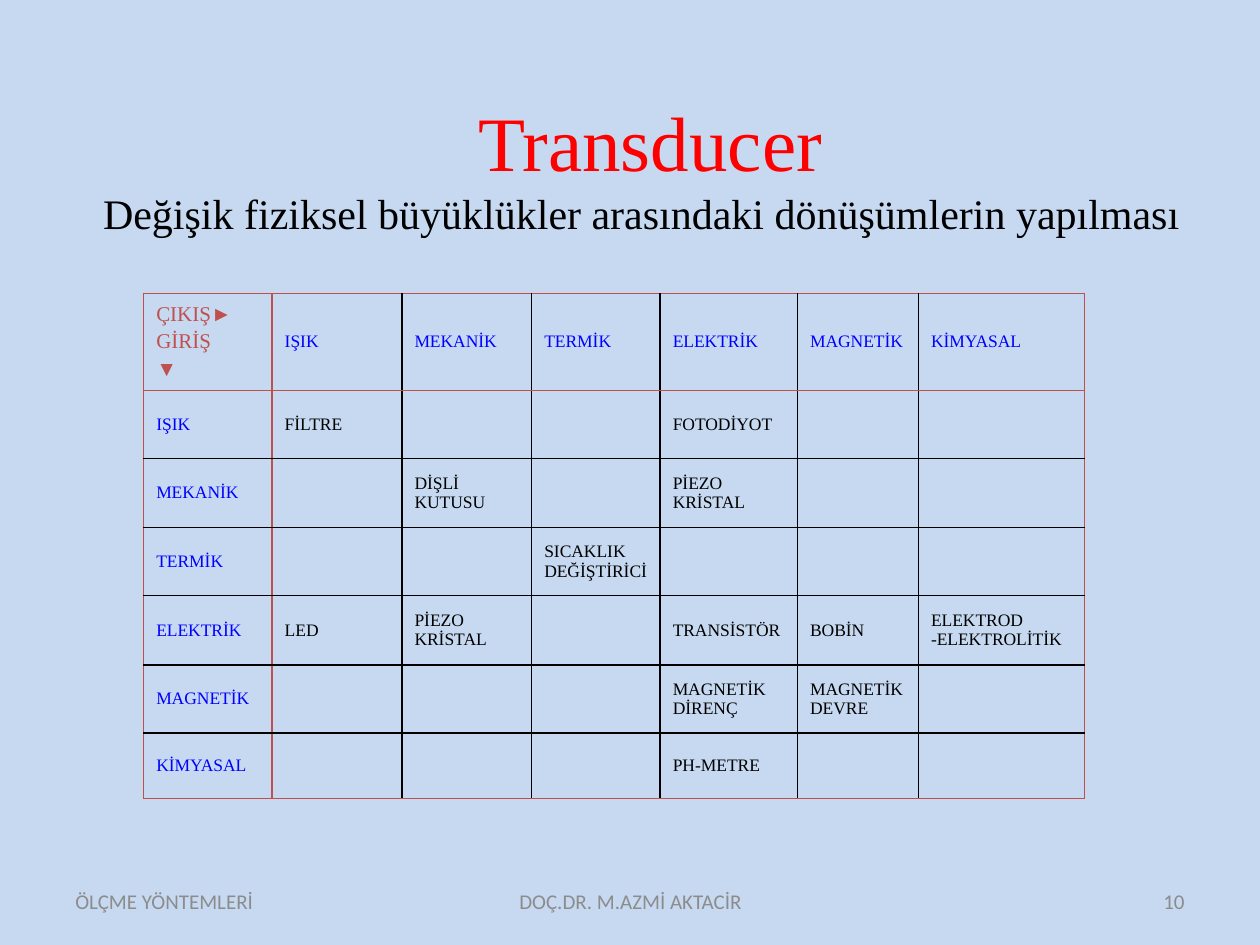
from lxml.etree import SubElement
from pptx import Presentation
from pptx.dml.color import RGBColor
from pptx.enum.text import MSO_ANCHOR, PP_ALIGN
from pptx.oxml.ns import qn
from pptx.util import Inches, Pt

SKY = RGBColor(0xC6, 0xD9, 0xF1)
RED = RGBColor(0xFF, 0x00, 0x00)
BRICK = RGBColor(0xC0, 0x50, 0x4D)
BLUE = RGBColor(0x00, 0x00, 0xFF)
BLACK = RGBColor(0x00, 0x00, 0x00)
GREY = RGBColor(0x8C, 0x8C, 0x8C)
SERIF, SANS = "Times New Roman", "Calibri"


def style(span, size, color, name=SERIF):
    span.font.size = Pt(size)
    span.font.name = name
    span.font.color.rgb = color


def add_border(cell, side, color):
    line = SubElement(cell._tc.get_or_add_tcPr(), qn("a:ln" + side), w=str(Pt(1)))
    fill = SubElement(line, qn("a:solidFill"))
    SubElement(fill, qn("a:srgbClr"), val=str(color))


deck = Presentation()
deck.slide_width, deck.slide_height = Inches(10), Inches(7.5)
page = deck.slides.add_slide(deck.slide_layouts[6])
page.background.fill.solid()
page.background.fill.fore_color.rgb = SKY

# Title and subtitle, parted by a line break
box = page.shapes.add_textbox(Inches(0.59), Inches(0.68), Inches(9), Inches(1.28))
frame = box.text_frame
frame.word_wrap = True
frame.vertical_anchor = MSO_ANCHOR.MIDDLE
para = frame.paragraphs[0]
para.text = " Transducer\vDeğişik fiziksel büyüklükler arasındaki dönüşümlerin yapılması"
para.alignment = PP_ALIGN.CENTER
style(para.runs[0], 44, RED)
style(para.runs[1], 24, BLACK)

# Transducer table: inputs down, outputs across
quantities = ["IŞIK", "MEKANİK", "TERMİK", "ELEKTRİK", "MAGNETİK", "KİMYASAL"]
devices = [
    ["FİLTRE", "", "", "FOTODİYOT", "", ""],
    ["", "DİŞLİ KUTUSU", "", "PİEZO KRİSTAL", "", ""],
    ["", "", "SICAKLIK DEĞİŞTİRİCİ", "", "", ""],
    ["LED", "PİEZO KRİSTAL", "", "TRANSİSTÖR", "BOBİN", "ELEKTROD -ELEKTROLİTİK"],
    ["", "", "", "MAGNETİK DİRENÇ", "MAGNETİK DEVRE", ""],
    ["", "", "", "PH-METRE", "", ""],
]
rows = [["ÇIKIŞ►\nGİRİŞ\n▼"] + quantities]
rows += [[quantity] + found for quantity, found in zip(quantities, devices)]
widths = [1.02, 1.03, 1.03, 1.02, 1.09, 0.96, 1.32]
heights = [0.73, 0.54, 0.55, 0.54, 0.55, 0.54, 0.52]
count = len(rows)
table = page.shapes.add_table(count, count, Inches(1.14), Inches(2.33),
                              Inches(7.48), Inches(sum(heights))).table
table.first_row = table.horz_banding = False
for column, width in zip(table.columns, widths):
    column.width = Inches(width)
for table_row, height in zip(table.rows, heights):
    table_row.height = Inches(height)

brick_lines = (0, 1, count)  # outer frame and header edges
for i, row in enumerate(rows):
    for j, text in enumerate(row):
        cell = table.cell(i, j)
        cell.text_frame.text = text
        cell.vertical_anchor = MSO_ANCHOR.MIDDLE
        for side, edge in (("L", j), ("R", j + 1), ("T", i), ("B", i + 1)):
            add_border(cell, side, BRICK if edge in brick_lines else BLACK)
        cell.fill.background()
        if i == j == 0:
            size, color = 12, BRICK
        else:
            size, color = 10, BLUE if i == 0 or j == 0 else BLACK
        for para in cell.text_frame.paragraphs:
            para.space_before = Pt(size * 0.2)
            para.font.size = Pt(size)
            for span in para.runs:
                style(span, size, color)

# Footer: course, page number, lecturer
footers = [
    ("ÖLÇME YÖNTEMLERİ", 0.5, 2.33, PP_ALIGN.LEFT),
    ("10", 7.17, 2.33, PP_ALIGN.RIGHT),
    ("DOÇ.DR. M.AZMİ AKTACİR", 3.42, 3.17, PP_ALIGN.CENTER),
]
for text, left, width, alignment in footers:
    box = page.shapes.add_textbox(Inches(left), Inches(6.95), Inches(width), Inches(0.4))
    frame = box.text_frame
    frame.word_wrap = True
    frame.vertical_anchor = MSO_ANCHOR.MIDDLE
    frame.text = text
    para = frame.paragraphs[0]
    para.alignment = alignment
    style(para.runs[0], 12, GREY, SANS)

deck.save("out.pptx")
